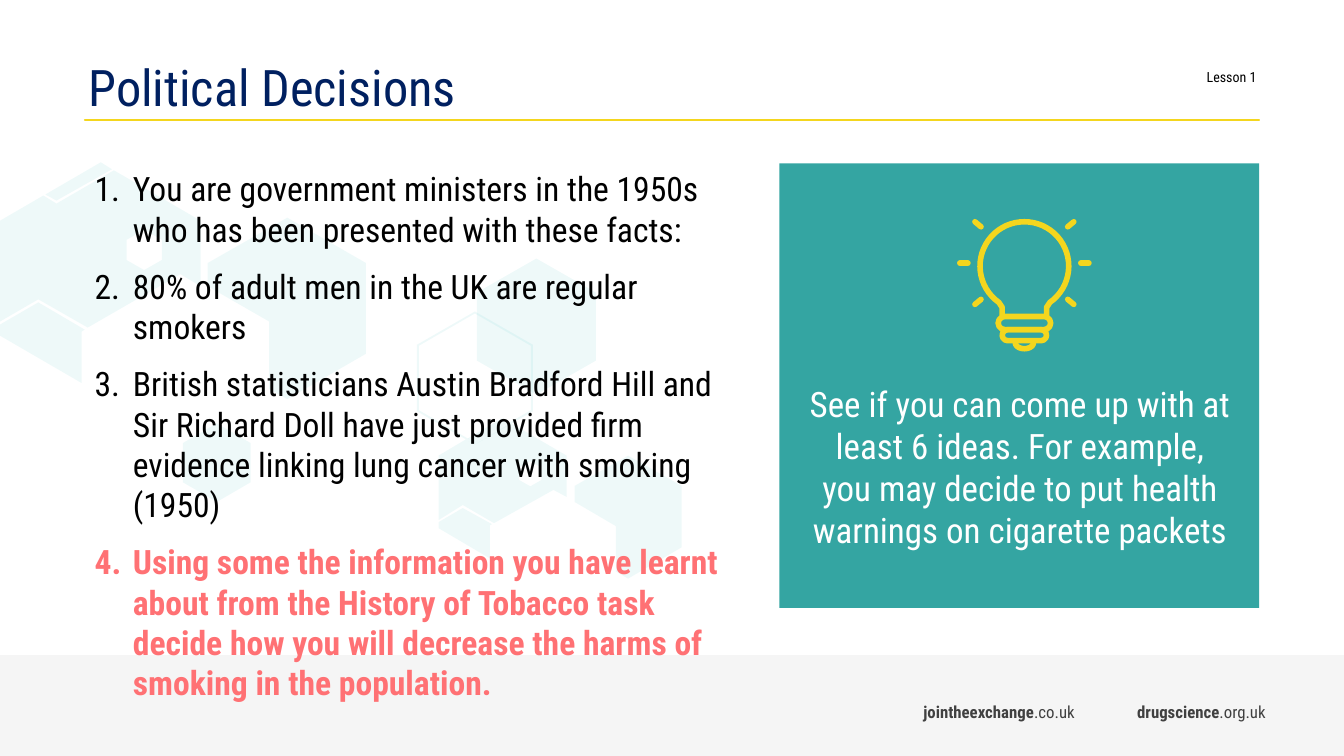
import math

from lxml import etree
from pptx import Presentation
from pptx import util as u
from pptx.dml.color import RGBColor
from pptx.enum import shapes, text
from pptx.oxml.ns import qn

EMU_PER_PX = 9144
FONT = "Roboto Condensed"
YELLOW, TEAL, MINT, NAVY, CORAL = "F4D61E", "34A5A2", "5AC9CA", "002060", "FF7174"
WHITE, BLACK, GREY, DARK = "FFFFFF", "000000", "F2F2F2", "404040"


def px(length):
    """Turn px, at 100 to the inch, into EMU."""
    return u.Emu(round(length * EMU_PER_PX))


def color(value):
    """Turn a hex string into a colour."""
    return RGBColor.from_string(value)


def paint(shape, fill=None, opacity=100, line=None, width=4):
    """Set the fill and the round-ended outline of a shape."""
    shape.shadow.inherit = False
    if fill:
        shape.fill.solid()
        shape.fill.fore_color.rgb = color(fill)
        if opacity < 100:
            tint = shape._element.spPr.find(qn("a:solidFill"))[0]
            etree.SubElement(tint, qn("a:alpha"), val=str(opacity * 1000))
    else:
        shape.fill.background()
    if line:
        stroke(shape, line, width)
    else:
        shape.line.fill.background()


def stroke(shape, line, width):
    """Give a shape or connector a round-ended line."""
    shape.line.color.rgb = color(line)
    shape.line.width = u.Pt(width)
    shape._element.spPr.find(qn("a:ln")).set("cap", "rnd")


def add_block(slide, box, kind=shapes.MSO_SHAPE.RECTANGLE, **style):
    """Add a painted preset shape."""
    shape = slide.shapes.add_shape(kind, *map(px, box))
    paint(shape, **style)
    return shape


def add_line(slide, start, end, line=YELLOW, width=4):
    """Add a straight line without a shadow."""
    connector = slide.shapes.add_connector(
        shapes.MSO_CONNECTOR.STRAIGHT, *map(px, (*start, *end)))
    stroke(connector, line, width)
    etree.SubElement(connector._element.spPr, qn("a:effectLst"))


def add_outline(slide, origin, contours, close=True, **style):
    """Add one freeform made of contours measured from the origin."""
    left, top = origin
    builder = None
    for contour in contours:
        first, *rest = [(px(left + x), px(top + y)) for x, y in contour]
        if builder is None:
            builder = slide.shapes.build_freeform(*first, scale=1.0)
        else:
            builder.move_to(*first)
        builder.add_line_segments(rest, close=close)
    paint(builder.convert_to_shape(), **style)


def add_text(slide, box, paragraphs, size, ink=BLACK, align="LEFT", inset=5,
             after=0, spacing=None, indent=0):
    """Add a text box of paragraphs, each a list of (text, bold, colour) runs."""
    frame = slide.shapes.add_textbox(*map(px, box)).text_frame
    frame.word_wrap = True
    frame.margin_top = frame.margin_bottom = px(inset)
    frame.margin_left = frame.margin_right = px(10)
    for index, runs in enumerate(paragraphs):
        paragraph = frame.add_paragraph() if index else frame.paragraphs[0]
        paragraph.alignment = text.PP_ALIGN[align]
        paragraph.space_after = u.Pt(after)
        if spacing:
            paragraph.line_spacing = spacing
        if indent:
            properties = paragraph._p.get_or_add_pPr()
            properties.set("marL", str(px(indent)))
            properties.set("indent", str(-px(indent)))
            etree.SubElement(properties, qn("a:buFont"), typeface="+mj-lt")
            etree.SubElement(properties, qn("a:buAutoNum"), type="arabicPeriod")
        for words, bold, run_ink in runs:
            run = paragraph.add_run()
            run.text = words
            run.font.name, run.font.size, run.font.bold = FONT, u.Pt(size), bold
            run.font.color.rgb = color(run_ink or ink)


def hexagon(x, y, width, height):
    """Return the corners of an upright hexagon around a centre."""
    side, rise = width / 2, height / 4
    return [(x, y - 2 * rise), (x + side, y - rise), (x + side, y + rise),
            (x, y + 2 * rise), (x - side, y + rise), (x - side, y - rise)]


def arc(x, y, across, down, start, end, steps=48):
    """Return points along an ellipse between two angles in degrees."""
    angles = [math.radians(start + (end - start) * step / steps)
              for step in range(steps + 1)]
    return [(x + across * math.cos(a), y + down * math.sin(a)) for a in angles]


def draw_pattern(slide, box):
    """Draw the pale hexagons behind the text."""
    tiles = [
        [hexagon(471, 375, 115, 132), hexagon(471, 375, 111, 128)],
        [[(676, 482), (676, 543), (623, 574), (611, 567), (611, 522),
          (570, 498), (570, 482), (623, 452)]],
        [[(498, 415), (464, 435), (471, 439), (505, 419)],
         [(507, 420), (471, 441), (462, 436), (435, 452), (435, 516),
          (459, 501), (490, 519), (549, 486), (562, 493), (562, 452)],
         hexagon(526, 470, 22, 25),
         [(459, 504), (435, 518), (435, 524), (486, 554), (486, 521),
          (488, 520)]],
        [hexagon(532, 324, 118, 135)],
        [[(84, 327), (81, 329), (81, 380), (0, 333), (0, 322), (38, 300)],
         hexagon(143, 248, 35, 40),
         [(199, 219), (199, 284), (179, 272), (87, 325), (38, 297), (0, 319),
          (0, 219), (43, 194), (56, 202), (113, 169)],
         [(100, 161), (111, 168), (56, 199), (45, 193)]],
        [hexagon(215, 459, 67, 78)],
        [[(285, 216), (206, 261), (206, 284), (267, 319), (267, 386),
          (285, 396), (363, 351), (363, 261)]],
    ]
    for contours in tiles:
        add_outline(slide, box[:2], contours, fill=MINT, opacity=10)


def draw_header(slide, box):
    """Draw the lesson label, the title and the rule below them."""
    left, top, width, height = box
    add_text(slide, (left + 512, top + 7, 666, 27),
             [[("Lesson 1", False, None)]], size=10, align="RIGHT")
    add_line(slide, (left + 6, top + height), (left + width, top + height), width=1)
    add_text(slide, (left, top + 2, 1129, 56),
             [[("Political Decisions", False, None)]], size=36, ink=NAVY, spacing=0.9)


def draw_footer(slide, box):
    """Draw the grey band with the two web addresses."""
    left, top, _, _ = box
    add_block(slide, box, fill=GREY, opacity=75)
    for offset, name, ending in ((906, "jointheexchange", ".co.uk"),
                                 (1118, "drugscience", ".org.uk")):
        add_text(slide, (left + offset, top + 36, 215, 40),
                 [[(name, True, None), (ending, False, None)]],
                 size=12, ink=DARK, inset=10)


def draw_facts(slide, box):
    """Write the numbered facts and the highlighted task."""
    facts = [
        "You are government ministers in the 1950s who has been presented with these facts:",
        "80% of adult men in the UK are regular smokers",
        "British statisticians Austin Bradford Hill and Sir Richard Doll have just "
        "provided firm evidence linking lung cancer with smoking (1950)",
    ]
    task = ("Using some the information you have learnt about from the History of Tobacco "
            "task decide how you will decrease the harms of smoking in the population.")
    paragraphs = [[(fact, False, None)] for fact in facts] + [[(task, True, CORAL)]]
    add_text(slide, box, paragraphs, size=24, after=12, indent=38)


def draw_bulb(slide, center):
    """Draw the light bulb and its rays around the centre of the glass."""
    x, y = center
    glass = [(-22, 48), (-22, 41), *arc(0, 0, 44, 44, 125, 415), (22, 41), (22, 48)]
    for points in (glass, arc(0, 76, 9, 6, 180, 0)):
        add_outline(slide, center, [points], close=False, line=YELLOW)
    for half, top, height in ((26, 50, 13), (22, 63, 11)):
        ring = add_block(slide, (x - half, y + top, 2 * half, height),
                         shapes.MSO_SHAPE.ROUNDED_RECTANGLE, line=YELLOW)
        ring.adjustments[0] = 0.5
    for near, far in (((43, -39), (49, -44)), ((56, -3), (64, -3)), ((43, 33), (49, 38))):
        for side in (-1, 1):
            add_line(slide, (x + side * near[0], y + near[1]),
                     (x + side * far[0], y + far[1]))


def draw_prompt(slide, box):
    """Draw the teal panel with its prompt and bulb."""
    left, top, width, _ = box
    add_block(slide, box, fill=TEAL)
    prompt = ("See if you can come up with at least 6 ideas. For example, "
              "you may decide to put health warnings on cigarette packets")
    add_text(slide, (left + 19, top + 213, width - 37, 178),
             [[(prompt, False, None)]], size=25, ink=WHITE, align="CENTER")
    draw_bulb(slide, (left + 243, top + 102))


def main():
    """Build and save the slide."""
    presentation = Presentation()
    presentation.slide_width, presentation.slide_height = px(1333), px(750)
    slide = presentation.slides.add_slide(presentation.slide_layouts[6])
    draw_footer(slide, (0, 650, 1333, 100))
    draw_pattern(slide, (0, 0, 676, 574))
    draw_header(slide, (78, 56, 1171, 63))
    draw_facts(slide, (84, 162, 656, 424))
    draw_prompt(slide, (773, 162, 476, 441))
    presentation.save("out.pptx")


if __name__ == "__main__":
    main()
